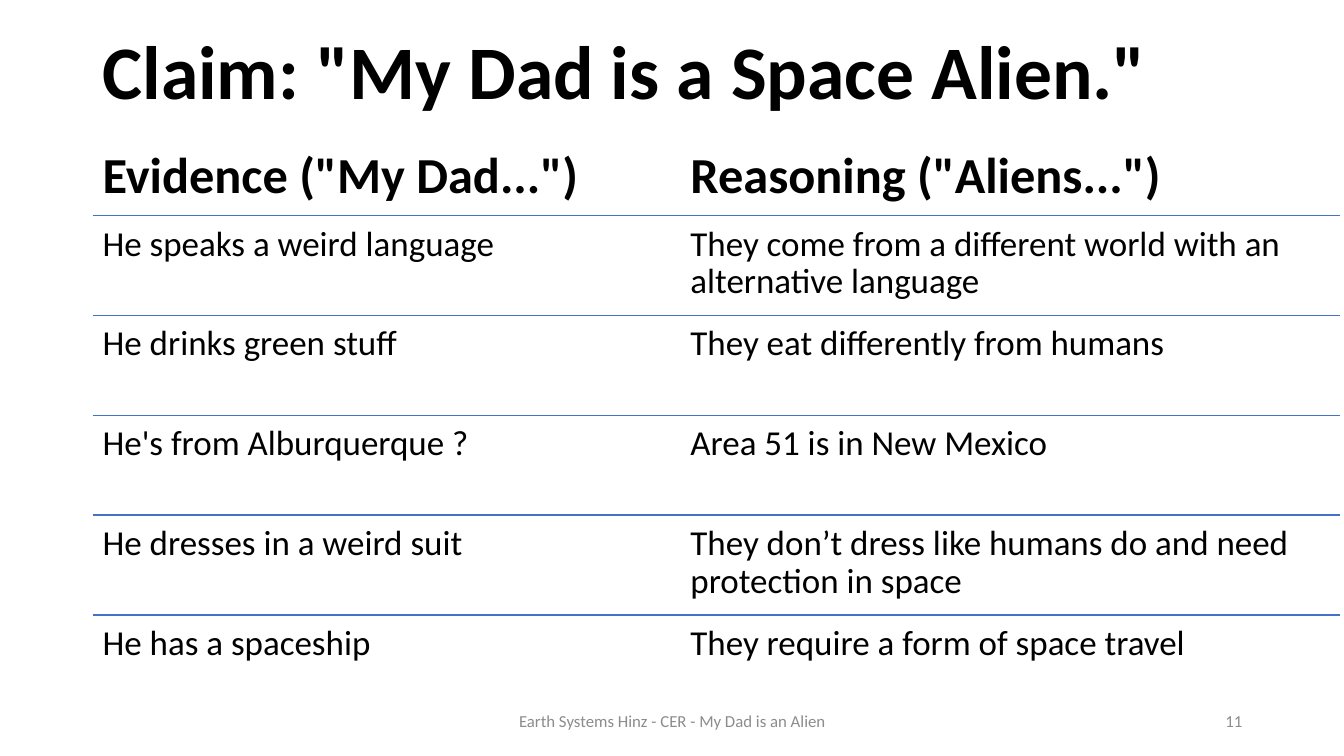
import pptx
import pptx.dml.color
import pptx.enum.shapes
import pptx.enum.text
import pptx.oxml
import pptx.util

Inches = pptx.util.Inches
Pt = pptx.util.Pt
ALIGN = pptx.enum.text.PP_ALIGN
ANCHOR = pptx.enum.text.MSO_ANCHOR

FONT = "Calibri"
BLACK, GRAY, BLUE = "000000", "8C8C8C", "4472C4"

# Grid, in inches
COLUMN_EDGES = [0.92, 6.75, 13.29]
TABLE_TOP, ROW_HEIGHT = 2.14, 0.99
HEADING_TOP, HEADING_HEIGHT = 1.18, 0.9
FOOTER_TOP, FOOTER_HEIGHT = 6.95, 0.4

COLUMNS = [
    ('Evidence ("My Dad...")', 5.64, [
        "He speaks a weird language",
        "He drinks green stuff",
        "He's from Alburquerque ?",
        "He dresses in a weird suit",
        "He has a spaceship",
    ]),
    ('Reasoning ("Aliens...")', 5.67, [
        "They come from a different world with an alternative language",
        "They eat differently from humans",
        "Area 51 is in New Mexico",
        "They don’t dress like humans do and need protection in space",
        "They require a form of space travel",
    ]),
]


def color(hex_string):
    return pptx.dml.color.RGBColor.from_string(hex_string)


def add_text(slide, text, left, top, width, height, *, size, fill=BLACK, bold=False,
             align=ALIGN.LEFT, anchor=ANCHOR.MIDDLE, line_spacing=1.0,
             space_before=0, inset=(0.1, 0.05)):
    """Inset is the horizontal and the vertical margin in inches."""
    shape = slide.shapes.add_textbox(Inches(left), Inches(top), Inches(width), Inches(height))
    frame = shape.text_frame
    frame.word_wrap = True
    frame.vertical_anchor = anchor
    frame.margin_left = frame.margin_right = Inches(inset[0])
    frame.margin_top = frame.margin_bottom = Inches(inset[1])
    paragraph = frame.paragraphs[0]
    paragraph.alignment = align
    paragraph.line_spacing = line_spacing
    paragraph.space_before = Pt(space_before)
    run = paragraph.add_run()
    run.text = text
    run.font.name = FONT
    run.font.size = Pt(size)
    run.font.bold = bold
    run.font.color.rgb = color(fill)


def add_rule(slide, left, right, y):
    rule = slide.shapes.add_connector(
        pptx.enum.shapes.MSO_CONNECTOR.STRAIGHT,
        Inches(left), Inches(y), Inches(right), Inches(y))
    rule.line.color.rgb = color(BLUE)
    rule.line.width = Pt(1)
    properties = rule._element.spPr
    properties.append(pptx.oxml.parse_xml(
        '<a:effectLst xmlns:a="http://schemas.openxmlformats.org/drawingml/2006/main"/>'))


def add_column(slide, left, right, heading, heading_width, entries):
    add_text(slide, heading, left, HEADING_TOP, heading_width, HEADING_HEIGHT,
             size=36, bold=True, anchor=ANCHOR.BOTTOM, line_spacing=0.9, space_before=10)
    for row, entry in enumerate(entries):
        top = TABLE_TOP + row * ROW_HEIGHT
        add_rule(slide, left, right, top)
        add_text(slide, entry, left, top, right - left, ROW_HEIGHT, size=25,
                 anchor=ANCHOR.TOP, line_spacing=0.9, inset=(0.1, 0.1))


def main():
    presentation = pptx.Presentation()
    presentation.slide_width = Inches(13.33)
    presentation.slide_height = Inches(7.5)
    slide = presentation.slides.add_slide(presentation.slide_layouts[6])

    add_text(slide, 'Claim: "My Dad is a Space Alien."', COLUMN_EDGES[0], 0.02, 11.5, 1.45,
             size=54, bold=True, line_spacing=0.9)
    for left, right, column in zip(COLUMN_EDGES, COLUMN_EDGES[1:], COLUMNS):
        add_column(slide, left, right, *column)
    add_text(slide, "Earth Systems Hinz - CER - My Dad is an Alien",
             4.42, FOOTER_TOP, 4.5, FOOTER_HEIGHT, size=12, fill=GRAY, align=ALIGN.CENTER)
    add_text(slide, "11", 9.42, FOOTER_TOP, 3, FOOTER_HEIGHT,
             size=12, fill=GRAY, align=ALIGN.RIGHT)

    presentation.save("out.pptx")


if __name__ == "__main__":
    main()
